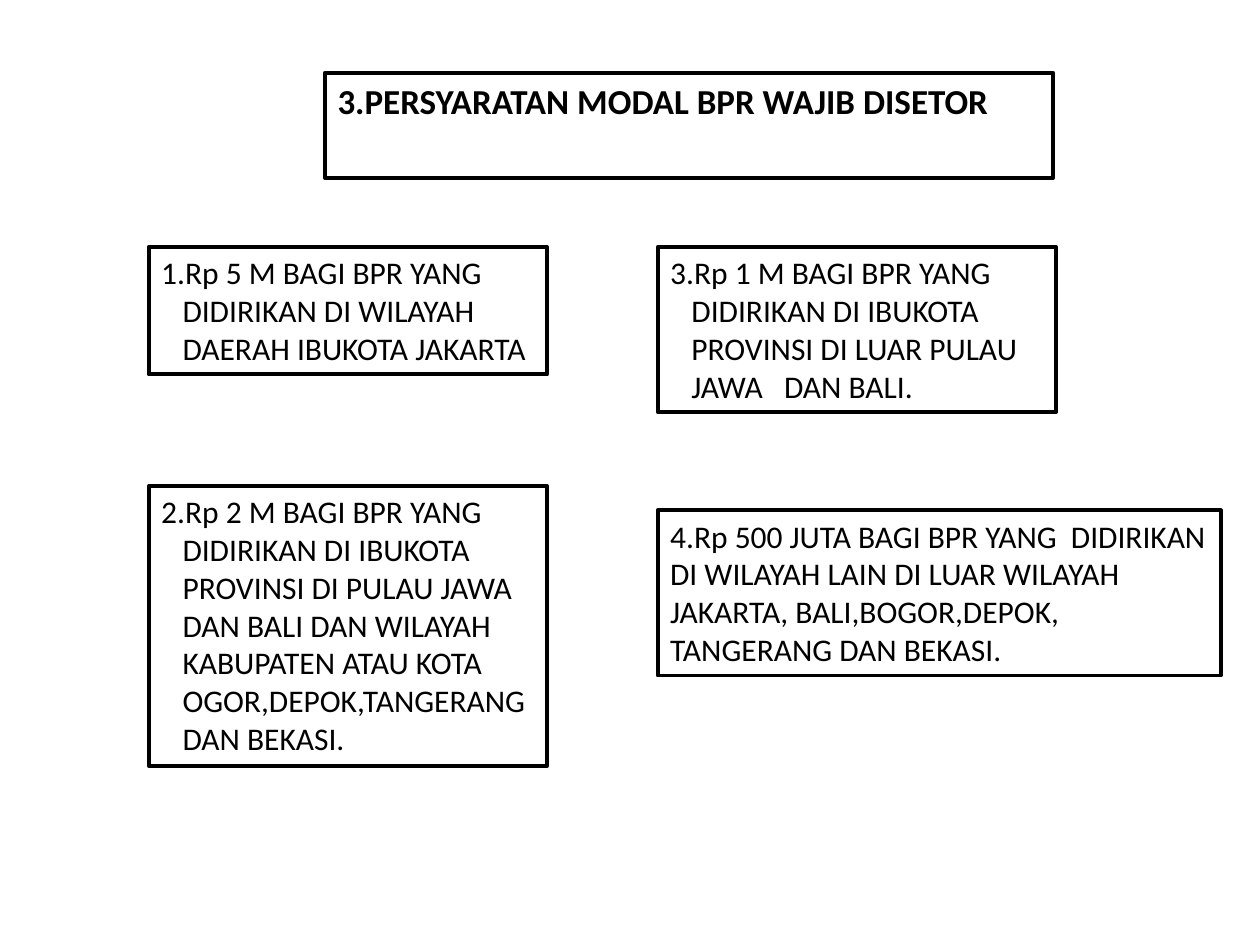
from pptx import Presentation
from pptx.dml.color import RGBColor
from pptx.enum.text import MSO_ANCHOR, MSO_AUTO_SIZE, PP_ALIGN
from pptx.util import Cm, Pt

BLACK = RGBColor(0x00, 0x00, 0x00)
LEFT_COLUMN, RIGHT_COLUMN = 3, 13.26
TOP_ROW = 4.98
BOX_WIDTH = 8.03

REQUIREMENTS = [
    ((LEFT_COLUMN, TOP_ROW, BOX_WIDTH, 2.57), 0.43, [
        "1.Rp 5 M BAGI BPR YANG",
        "DIDIRIKAN DI WILAYAH",
        "DAERAH IBUKOTA JAKARTA",
    ]),
    ((LEFT_COLUMN, 9.8, BOX_WIDTH, 5.64), 0.43, [
        "2.Rp 2 M BAGI BPR YANG",
        "DIDIRIKAN DI IBUKOTA",
        "PROVINSI DI PULAU JAWA",
        "DAN BALI DAN WILAYAH",
        "KABUPATEN ATAU KOTA",
        "OGOR,DEPOK,TANGERANG",
        "DAN BEKASI.",
    ]),
    ((RIGHT_COLUMN, TOP_ROW, BOX_WIDTH, 3.33), 0.43, [
        "3.Rp 1 M BAGI BPR YANG",
        "DIDIRIKAN DI IBUKOTA",
        "PROVINSI DI LUAR PULAU",
        "JAWA   DAN BALI.",
    ]),
    ((RIGHT_COLUMN, 10.29, 11.35, 3.33), 0, [
        "4.Rp 500 JUTA BAGI BPR YANG  DIDIRIKAN DI WILAYAH LAIN DI LUAR WILAYAH "
        "JAKARTA, BALI,BOGOR,DEPOK,",
        "TANGERANG DAN BEKASI.",
    ]),
]


class FramedPage:
    font_name = "Calibri"
    title_size = Pt(20)
    text_size = Pt(18)
    frame_width = Pt(2.25)

    def __init__(self, page):
        self.page = page

    def title(self, area, text):
        box = self.page.shapes.title
        box.left, box.top, box.width, box.height = map(Cm, area)
        self.fill_frame(box, [text], self.title_size, bold=True)

    def requirement(self, area, indent, lines):
        box = self.page.shapes.add_textbox(*map(Cm, area))
        self.fill_frame(box, lines, self.text_size, indent=indent)

    def fill_frame(self, box, lines, size, bold=False, indent=0):
        """Outline the box and set its lines, indenting all but the first."""
        box.line.color.rgb = BLACK
        box.line.width = self.frame_width
        frame = box.text_frame
        frame.word_wrap = True
        frame.auto_size = MSO_AUTO_SIZE.SHAPE_TO_FIT_TEXT
        frame.vertical_anchor = MSO_ANCHOR.TOP
        frame.text = "\n".join(lines)
        for number, para in enumerate(frame.paragraphs):
            para.alignment = PP_ALIGN.LEFT
            para.font.name = self.font_name
            para.font.size = size
            para.font.bold = bold
            para.font.color.rgb = BLACK
            if number and indent:
                para._p.get_or_add_pPr().set("marL", str(Cm(indent)))


def main():
    deck = Presentation()
    deck.slide_width, deck.slide_height = Cm(25.4), Cm(19.05)
    title_only = deck.slide_layouts[5]
    page = FramedPage(deck.slides.add_slide(title_only))
    page.title((6.55, 1.47, 14.68, 1.11), "3.PERSYARATAN MODAL BPR WAJIB DISETOR")
    for area, indent, lines in REQUIREMENTS:
        page.requirement(area, indent, lines)
    deck.save("out.pptx")


if __name__ == "__main__":
    main()
